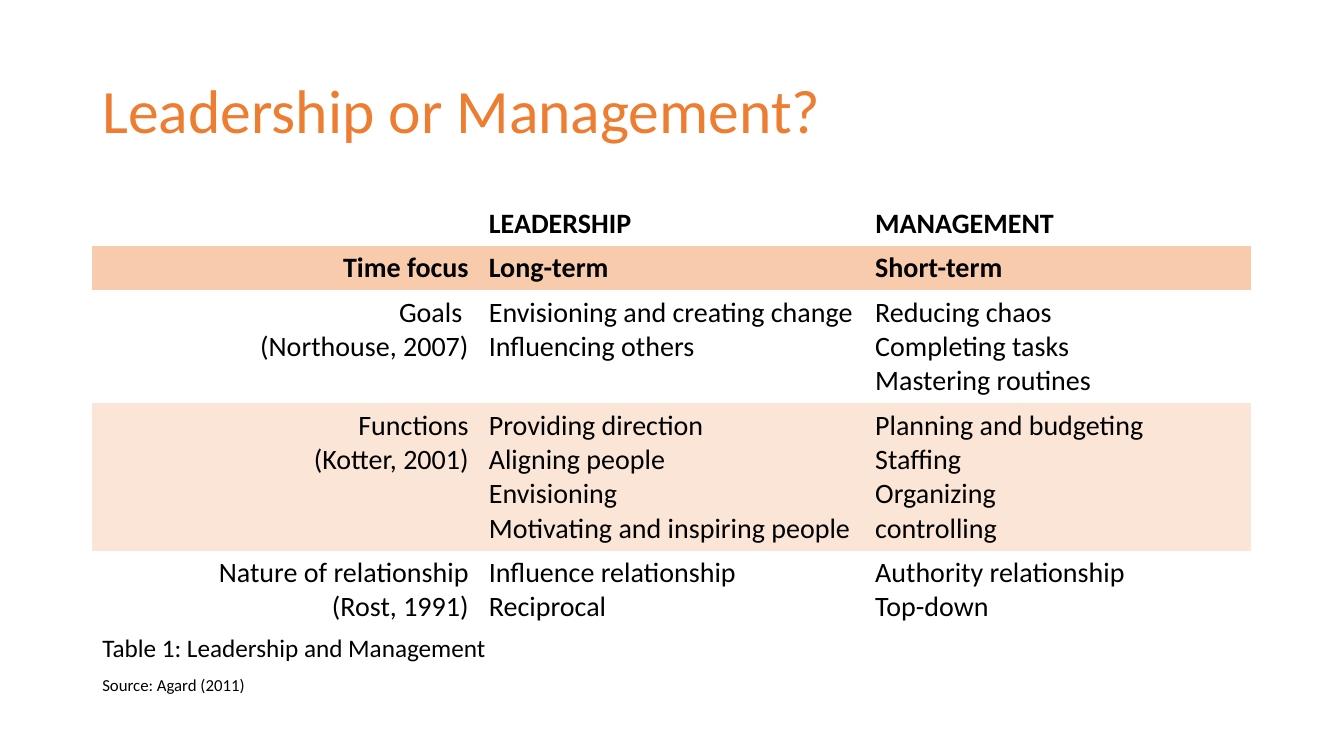
from pptx import Presentation
from pptx.dml.color import RGBColor
from pptx.enum.text import MSO_ANCHOR, PP_ALIGN
from pptx.util import Pt

HUES = {"title": "ED7D31", "text": "000000", "focus": "F8CBAD", "band": "FBE5D6"}
LEFT, WIDTH = Pt(66), Pt(828)
PLAIN = "{2D5ABB26-0587-4C30-8999-92F81FD0307C}"
ROWS = [
    (31.6, None, True, ["", "LEADERSHIP", "MANAGEMENT"]),
    (31.6, "focus", True, ["Time focus", "Long-term", "Short-term"]),
    (80.4, None, False, [
        "Goals \n(Northouse, 2007)",
        "Envisioning and creating change\nInfluencing others",
        "Reducing chaos\nCompleting tasks\nMastering routines"]),
    (104.8, "band", False, [
        "Functions\n(Kotter, 2001)",
        "Providing direction\nAligning people\nEnvisioning\nMotivating and inspiring people",
        "Planning and budgeting\nStaffing\nOrganizing\ncontrolling"]),
    (56, None, False, [
        "Nature of relationship\n(Rost, 1991)",
        "Influence relationship\nReciprocal",
        "Authority relationship\nTop-down"]),
]


def style(para, size, hue="text", bold=False, **form):
    """Format a paragraph and its font."""
    for name, value in form.items():
        setattr(para, name, value)
    for name, value in {"name": "Calibri", "size": Pt(size), "bold": bold}.items():
        setattr(para.font, name, value)
    para.font.color.rgb = RGBColor.from_string(HUES[hue])


def place(shape, top, height):
    """Set a shape across the text width."""
    for name, value in {"left": LEFT, "top": top, "width": WIDTH, "height": height}.items():
        setattr(shape, name, value)


def add_title(slide, text):
    """Fill the title placeholder."""
    title = slide.shapes.title
    place(title, Pt(28.8), Pt(104.4))
    title.text_frame.text = text
    title.text_frame.vertical_anchor = MSO_ANCHOR.MIDDLE
    style(title.text_frame.paragraphs[0], 44, "title",
          alignment=PP_ALIGN.LEFT, line_spacing=0.9)


def fill_cell(cell, text, hue, bold, align):
    """Write and colour one table cell."""
    cell.text = text
    if hue:
        cell.fill.solid()
        cell.fill.fore_color.rgb = RGBColor.from_string(HUES[hue])
    else:
        cell.fill.background()
    for para in cell.text_frame.paragraphs:
        style(para, 20, bold=bold, alignment=align)


def add_grid(slide):
    """Add the comparison table."""
    high = Pt(sum(row[0] for row in ROWS))
    table = slide.shapes.add_table(len(ROWS), 3, LEFT, Pt(144), WIDTH, high).table
    table.first_row = table.horz_banding = False
    table._tbl.tblPr[0].text = PLAIN
    for row, (height, hue, bold, texts) in zip(table.rows, ROWS):
        row.height = Pt(height)
        for col, (cell, text) in enumerate(zip(row.cells, texts)):
            align = PP_ALIGN.LEFT if col else PP_ALIGN.RIGHT
            fill_cell(cell, text, hue, bold, align)


def add_notes(slide, lines):
    """Add the caption and source below the table."""
    box = slide.shapes.add_textbox(LEFT, Pt(450.7), WIDTH, Pt(78.5))
    frame = box.text_frame
    frame.word_wrap = True
    frame.text = "\n".join(text for text, size in lines)
    for index, (para, (text, size)) in enumerate(zip(frame.paragraphs, lines)):
        style(para, size, line_spacing=0.9, space_before=Pt(10 if index else 0))


def main():
    """Build and save the slide."""
    deck = Presentation()
    deck.slide_width, deck.slide_height = Pt(960), Pt(540)
    slide = deck.slides.add_slide(deck.slide_layouts[5])
    add_title(slide, "Leadership or Management?")
    add_grid(slide)
    add_notes(slide, [("Table 1: Leadership and Management", 18),
                      ("Source: Agard (2011)", 12)])
    deck.save("out.pptx")


if __name__ == "__main__":
    main()
